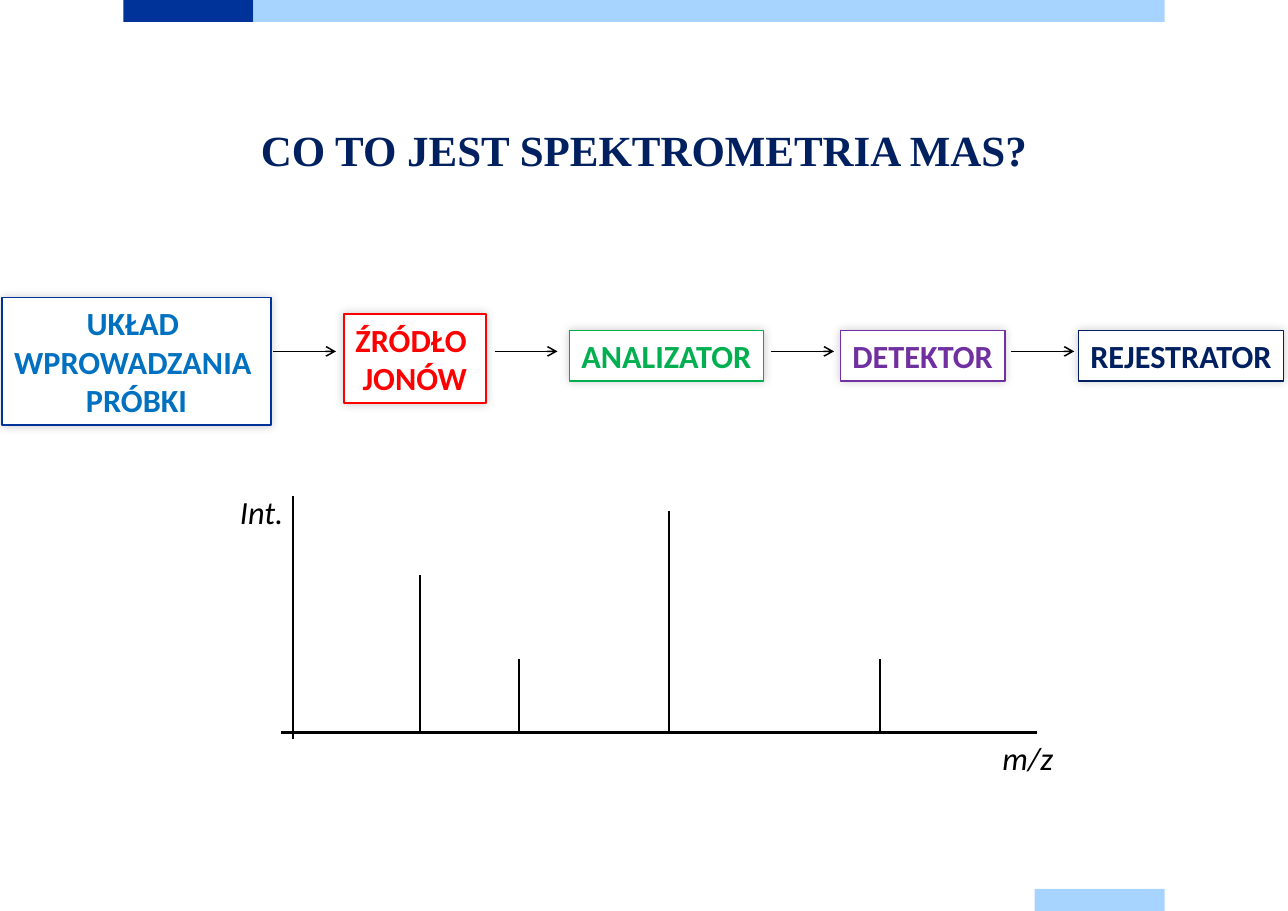
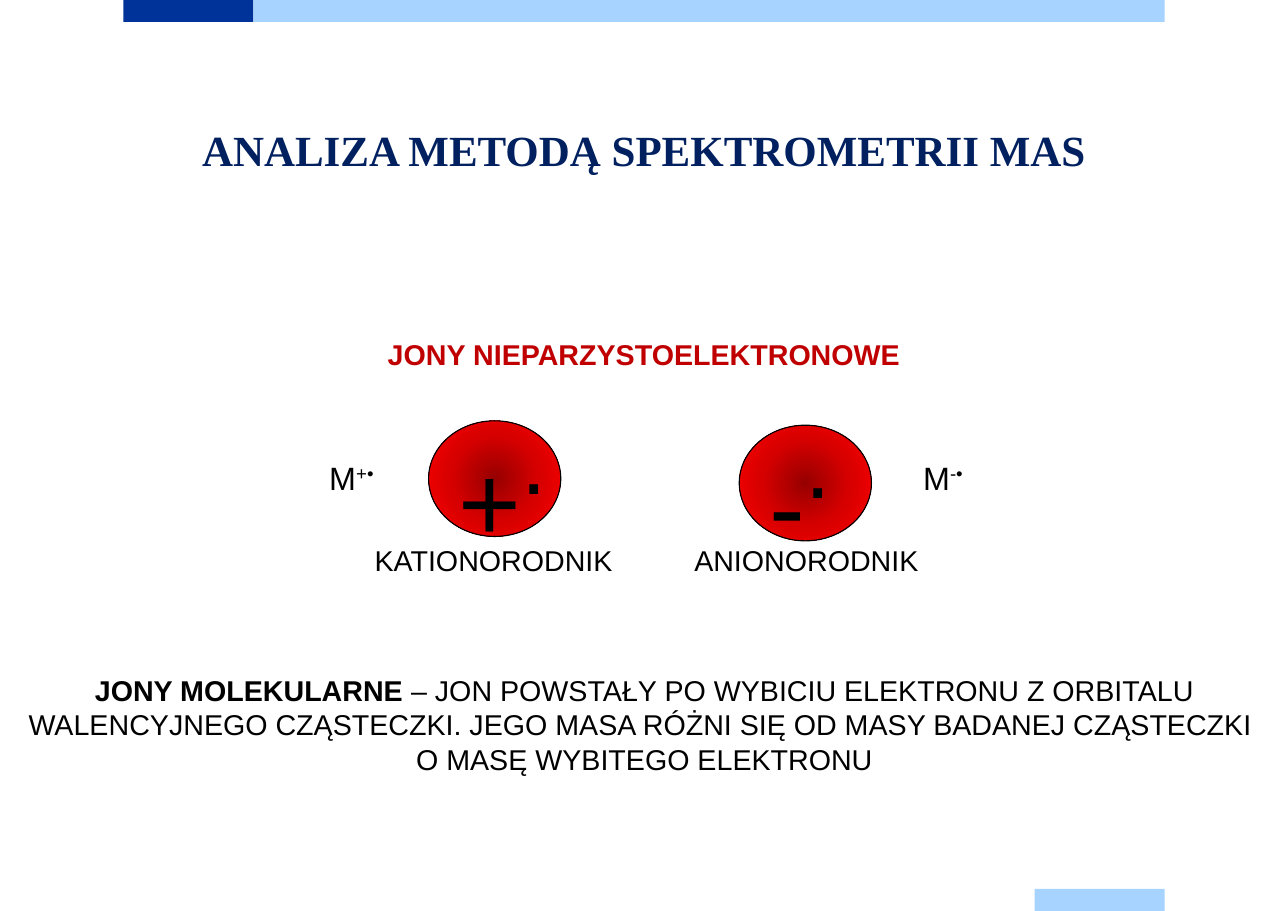
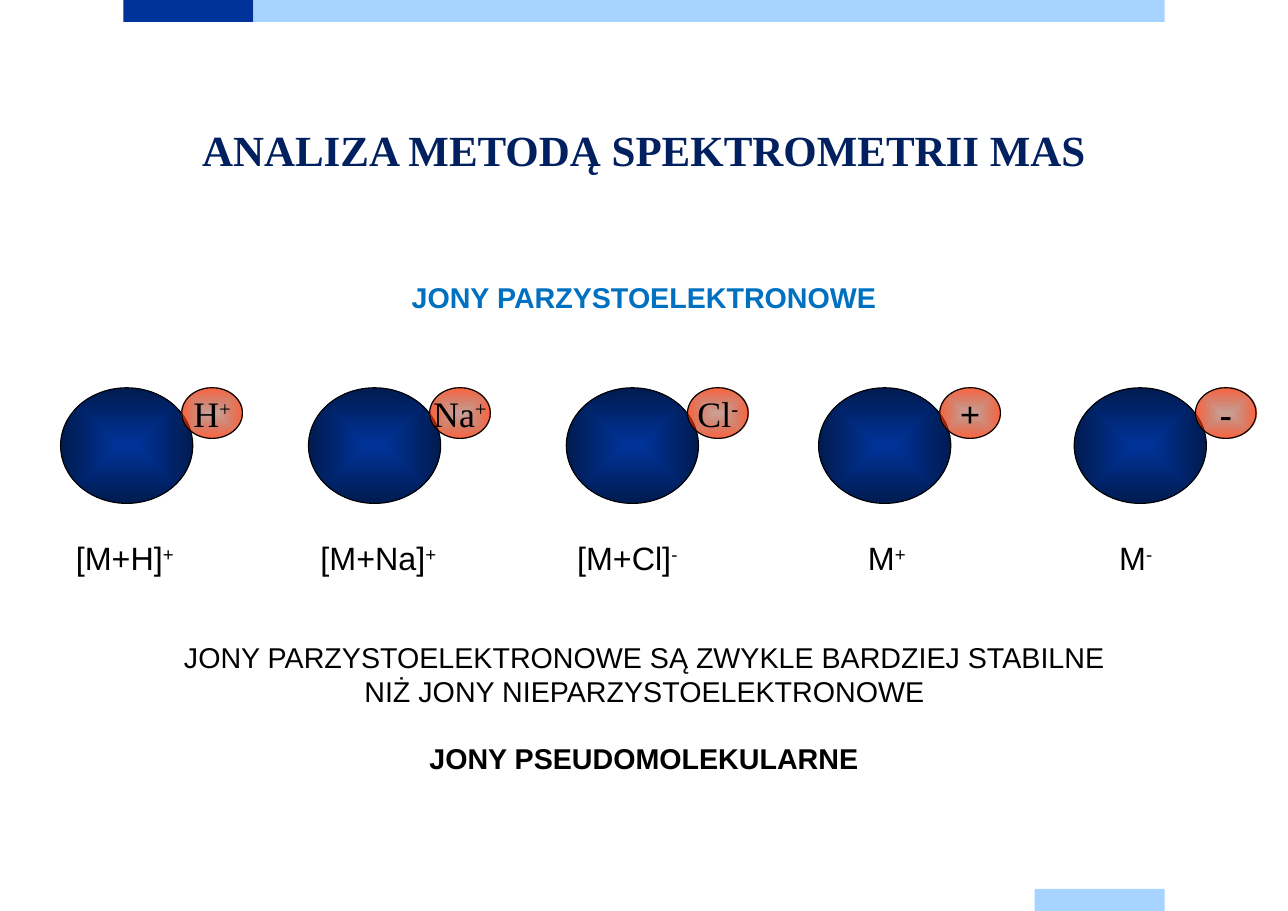
from dataclasses import dataclass, replace

from lxml.etree import SubElement
from pptx import Presentation
from pptx.dml.color import RGBColor
from pptx.enum.shapes import MSO_CONNECTOR, MSO_SHAPE
from pptx.enum.text import MSO_ANCHOR, MSO_AUTO_SIZE, PP_ALIGN
from pptx.oxml import parse_xml
from pptx.oxml.ns import nsdecls, qn
from pptx.util import Pt

PX = 9144
WIDTH, HEIGHT = 1169, 827
COLORS = {
    "white": "FFFFFF", "black": "000000", "navy": "002060", "royal": "003399",
    "sky": "A6D3FF", "blue": "0070C0", "red": "FF0000", "green": "00B050",
    "purple": "7030A0", "crimson": "C00000",
}
GRADIENTS = {
    "radical": ("circle", [(0, "970000", 100), (50, "D70000", 100), (100, "FF0000", 100)]),
    "molecule": ("shape", [(0, "003399", 100), (100, "001B50", 100)]),
    "charge": ("shape", [(0, "821A00", 41), (100, "FF3300", 76)]),
}


@dataclass(frozen=True)
class Style:
    font: str = "Arial"
    size: float = 18.7
    color: str = "black"
    bold: bool = False
    italic: bool = False
    raised: bool = False


BODY = Style()
STRONG = Style(bold=True)
FORMULA = Style(size=21.1)
TITLE = Style("Times New Roman", 28.1, "navy", bold=True)
AXIS = Style("Calibri", 21.1, italic=True)
STAGE = Style("Calibri", 21.1, bold=True)
ATOM = Style("Times New Roman", 23.4)
SIGN = Style(size=70.2)
DOT = Style(size=102.9, raised=True)


class Deck:
    """Build slides that share one look."""

    def __init__(self):
        self.prs = Presentation()
        self.prs.slide_width = WIDTH * PX
        self.prs.slide_height = HEIGHT * PX
        self.shapes = None

    def slide(self, title):
        self.shapes = self.prs.slides.add_slide(self.prs.slide_layouts[6]).shapes
        self.shape((112, 0, 118, 20), "royal")
        self.shape((230, 0, 827, 20), "sky")
        self.shape((939, 807, 118, 20), "sky")
        sp = self.text((0, 109, WIDTH, 127), title, TITLE, wrap=True)
        tf = sp.text_frame
        tf.auto_size = MSO_AUTO_SIZE.NONE
        tf.margin_left = tf.margin_right = tf.margin_top = tf.margin_bottom = 0
        tf.paragraphs[0].line_spacing = Pt(36)

    def shape(self, box, fill, line=None, width=1.0, kind=MSO_SHAPE.RECTANGLE):
        sp = self.shapes.add_shape(kind, *(n * PX for n in box))
        if fill in GRADIENTS:
            self.gradient(sp, *GRADIENTS[fill])
        else:
            sp.fill.solid()
            sp.fill.fore_color.rgb = RGBColor.from_string(COLORS[fill])
        if line:
            self.stroke(sp, line, width)
        else:
            sp.line.fill.background()
        sp.shadow.inherit = False
        return sp

    def gradient(self, sp, kind, stops):
        stop_xml = "".join(
            f'<a:gs pos="{pos * 1000}"><a:srgbClr val="{color}">'
            f'<a:alpha val="{alpha * 1000}"/></a:srgbClr></a:gs>'
            for pos, color, alpha in stops)
        fill = parse_xml(
            f'<a:gradFill {nsdecls("a")} rotWithShape="1"><a:gsLst>{stop_xml}</a:gsLst>'
            f'<a:path path="{kind}"><a:fillToRect l="50000" t="50000" r="50000" b="50000"/>'
            '</a:path></a:gradFill>')
        sp.fill.gradient()
        old = sp._element.spPr.find(qn("a:gradFill"))
        old.getparent().replace(old, fill)

    def stroke(self, sp, color, width):
        sp.line.color.rgb = RGBColor.from_string(COLORS[color])
        sp.line.width = Pt(width)

    def ellipse(self, box, fill):
        return self.shape(box, fill, "black", 0.75, MSO_SHAPE.OVAL)

    def line(self, x1, y1, x2, y2, width=1.5, arrow=False):
        sp = self.shapes.add_connector(
            MSO_CONNECTOR.STRAIGHT, *(n * PX for n in (x1, y1, x2, y2)))
        self.stroke(sp, "black", width)
        if arrow:
            SubElement(sp._element.spPr.find(qn("a:ln")), qn("a:tailEnd"), type="arrow")
        SubElement(sp._element.spPr, qn("a:effectLst"))

    def text(self, box, text, style, align=PP_ALIGN.CENTER, wrap=False,
             tail="", tail_style=None):
        sp = self.shapes.add_textbox(*(n * PX for n in box))
        self.label(sp, text, style, align, wrap, tail, tail_style)
        sp.text_frame.auto_size = MSO_AUTO_SIZE.SHAPE_TO_FIT_TEXT
        return sp

    def label(self, sp, text, style, align=PP_ALIGN.CENTER, wrap=False,
              tail="", tail_style=None):
        tf = sp.text_frame
        tf.text = text
        tf.word_wrap = wrap
        for p in tf.paragraphs:
            p.alignment = align
            for r in p.runs:
                self.style_run(r, style)
        if tail:
            for i, part in enumerate(tail.split("\v")):
                if i:
                    p.add_line_break()
                r = p.add_run()
                r.text = part
                self.style_run(r, tail_style or replace(style, raised=True))

    def style_run(self, r, style):
        font = r.font
        font.name = style.font
        font.size = Pt(style.size)
        font.bold = style.bold
        font.italic = style.italic
        font.color.rgb = RGBColor.from_string(COLORS[style.color])
        if style.raised:
            r._r.get_or_add_rPr().set("baseline", "30000")

    def stage(self, box, text, color, line):
        sp = self.shape(box, "white", line)
        self.label(sp, text, replace(STAGE, color=color))
        sp.text_frame.auto_size = MSO_AUTO_SIZE.SHAPE_TO_FIT_TEXT
        effects = sp._element.spPr.find(qn("a:effectLst"))
        effects.append(parse_xml(
            f'<a:outerShdw {nsdecls("a")} blurRad="76200" dist="0" dir="18900000" '
            'algn="ctr" rotWithShape="0"><a:srgbClr val="000000">'
            '<a:alpha val="20000"/></a:srgbClr></a:outerShdw>'))

    def radical(self, left, top, sign):
        sp = self.ellipse((left, top, 120, 105), "radical")
        sp.text_frame.vertical_anchor = MSO_ANCHOR.MIDDLE
        self.label(sp, sign, SIGN, PP_ALIGN.LEFT, tail=".", tail_style=DOT)

    def ion(self, left, atom, style, charge=""):
        self.ellipse((left, 352, 120, 105), "molecule")
        sp = self.ellipse((left + 110, 352, 55, 46), "charge")
        sp.text_frame.vertical_anchor = MSO_ANCHOR.MIDDLE
        self.label(sp, atom, style, tail=charge)

    def formula(self, box, text, charge):
        self.text(box, text, FORMULA, PP_ALIGN.LEFT, tail=charge)


def spectrometer(deck):
    deck.slide("CO TO JEST SPEKTROMETRIA MAS?")
    base = 665
    deck.line(255, base, 941, base)
    deck.line(266, 671, 266, 450)
    deck.text((900, base, 67, 46), "m/z", AXIS, PP_ALIGN.LEFT)
    deck.text((208, 442, 60, 46), "Int.", AXIS, PP_ALIGN.LEFT)
    for x, top in ((381, 522), (607, 464), (471, 598), (799, 598)):
        deck.line(x, base, x, top)
    for box, text, color, line in (
        ((2, 270, 244, 116), "UKŁAD \nWPROWADZANIA \nPRÓBKI", "blue", "royal"),
        ((312, 285, 129, 81), "ŹRÓDŁO \nJONÓW", "red", "red"),
        ((517, 300, 176, 46), "ANALIZATOR", "green", "green"),
        ((763, 300, 149, 46), "DETEKTOR", "purple", "purple"),
        ((979, 300, 186, 46), "REJESTRATOR", "navy", "navy"),
    ):
        deck.stage(box, text, color, line)
    for x in (248, 449, 700, 918):
        deck.line(x, 319, x + 57, 319, 1, arrow=True)


def odd_electron_ions(deck):
    deck.slide("ANALIZA METODĄ SPEKTROMETRII MAS")
    deck.text((340, 301, 489, 42), "JONY NIEPARZYSTOELEKTRONOWE",
              replace(STRONG, color="crimson"))
    deck.radical(389, 382, "+")
    deck.radical(671, 386, "-")
    deck.text((329, 488, 238, 42), "KATIONORODNIK", BODY)
    deck.text((619, 488, 226, 42), "ANIONORODNIK", BODY)
    deck.formula((289, 411, 63, 46), "M", "+•")
    deck.formula((828, 411, 58, 46), "M", "-•")
    deck.text((-19, 606, 1208, 105), "JONY MOLEKULARNE ", STRONG, wrap=True,
              tail="– JON POWSTAŁY PO WYBICIU ELEKTRONU Z ORBITALU WALENCYJNEGO "
                   "CZĄSTECZKI. JEGO MASA RÓŻNI SIĘ OD MASY BADANEJ CZĄSTECZKI "
                   "\vO MASĘ WYBITEGO ELEKTRONU",
              tail_style=BODY)


def even_electron_ions(deck):
    deck.slide("ANALIZA METODĄ SPEKTROMETRII MAS")
    deck.text((362, 249, 445, 42), "JONY PARZYSTOELEKTRONOWE",
              replace(STRONG, color="blue"))
    for left, atom, charge, label_left, label_width in (
        (55, "H", "+", 59, 111),
        (280, "Na", "+", 281, 128),
        (514, "Cl", "-", 514, 113),
        (743, "", "+", 778, 56),
        (975, "", "-", 1006, 51),
    ):
        if atom:
            deck.ion(left, atom, ATOM, charge)
        else:
            deck.ion(left, charge, replace(ATOM, bold=True))
        deck.formula((label_left, 484, label_width, 46),
                     f"[M+{atom}]" if atom else "M", charge)
    deck.text((153, 576, 864, 73),
              "JONY PARZYSTOELEKTRONOWE SĄ ZWYKLE BARDZIEJ STABILNE\n"
              "NIŻ JONY NIEPARZYSTOELEKTRONOWE", BODY)
    deck.text((378, 668, 413, 42), "JONY PSEUDOMOLEKULARNE", STRONG)


def main():
    deck = Deck()
    spectrometer(deck)
    odd_electron_ions(deck)
    even_electron_ions(deck)
    deck.prs.save("out.pptx")


if __name__ == "__main__":
    main()
